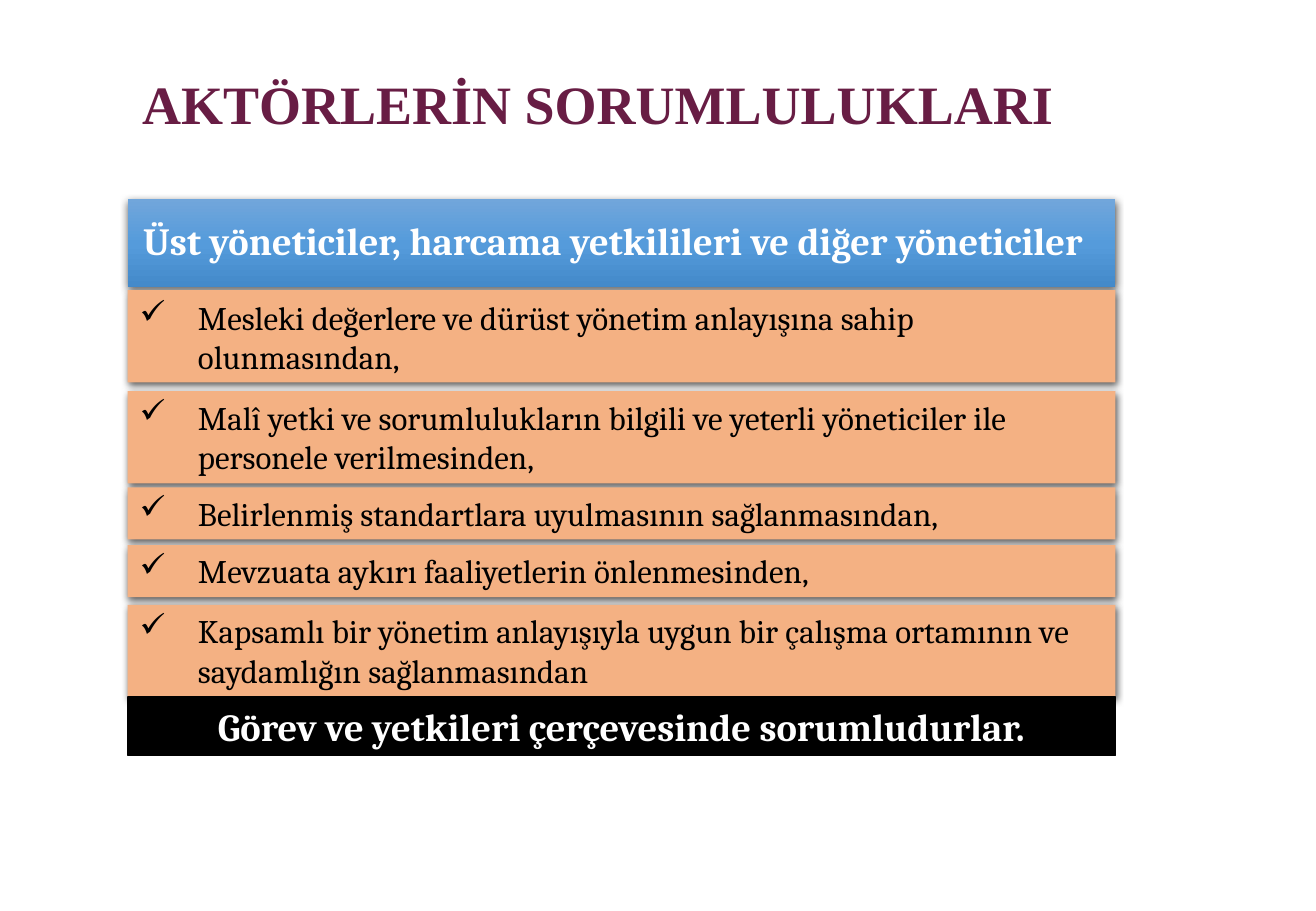
from copy import deepcopy
from dataclasses import dataclass

from lxml import etree
from pptx import Presentation
from pptx.dml.color import RGBColor
from pptx.enum.shapes import MSO_SHAPE
from pptx.enum.text import MSO_ANCHOR, MSO_AUTO_SIZE, PP_ALIGN
from pptx.oxml.ns import qn
from pptx.util import Cm, Pt

RECT = MSO_SHAPE.RECTANGLE
TOP, MIDDLE, BOTTOM = MSO_ANCHOR.TOP, MSO_ANCHOR.MIDDLE, MSO_ANCHOR.BOTTOM
LEFT, CENTER = PP_ALIGN.LEFT, PP_ALIGN.CENTER
GROW = MSO_AUTO_SIZE.SHAPE_TO_FIT_TEXT

EDGE, WIDTH = 2.67, 20.65
ONE, TWO = 1.09, 1.93
BLACK, WHITE, PEACH, PLUM = "000000", "FFFFFF", "F4B183", "681D44"
BLUES = ((0, "71A6DB"), (0.5, "559BDB"), (1, "448ACA"))


@dataclass
class Duty:
    top: float
    height: float
    text: str
    anchor: MSO_ANCHOR = TOP


DUTIES = [
    Duty(6.07, TWO, "Mesleki değerlere ve dürüst yönetim anlayışına sahip olunmasından,", BOTTOM),
    Duty(8.18, TWO, "Malî yetki ve sorumlulukların bilgili ve yeterli yöneticiler ile personele verilmesinden,"),
    Duty(10.19, ONE, "Belirlenmiş standartlara uyulmasının sağlanmasından,"),
    Duty(11.4, ONE, "Mevzuata aykırı faaliyetlerin önlenmesinden,"),
    Duty(12.65, TWO, "Kapsamlı bir yönetim anlayışıyla uygun bir çalışma ortamının ve saydamlığın sağlanmasından"),
]


def color(code: str) -> RGBColor:
    return RGBColor.from_string(code)


def write(shape, text: str, size: float, tint: str, bold: bool = False,
          font: str = "Cambria", align: PP_ALIGN = LEFT, anchor: MSO_ANCHOR = TOP):
    frame = shape.text_frame
    frame.text = text
    frame.word_wrap = True
    frame.vertical_anchor = anchor
    para = frame.paragraphs[0]
    para.alignment = align
    for run in para.runs:
        run.font.name = font
        run.font.size = Pt(size)
        run.font.bold = bold
        run.font.color.rgb = color(tint)
    return para


def add_bar(slide, top: float, height: float, fill: str):
    bar = slide.shapes.add_shape(RECT, Cm(EDGE), Cm(top), Cm(WIDTH), Cm(height))
    bar.shadow.inherit = False
    bar.fill.solid()
    bar.fill.fore_color.rgb = color(fill)
    bar.line.fill.background()
    return bar


def add_shade(bar) -> None:
    effects = bar.element.spPr.find(qn("a:effectLst"))
    shade = etree.SubElement(effects, qn("a:outerShdw"), blurRad=str(Pt(4.5)),
                             dist=str(Pt(1.5)), dir="5400000", rotWithShape="0")
    tone = etree.SubElement(shade, qn("a:srgbClr"), val=BLACK)
    etree.SubElement(tone, qn("a:alpha"), val="63000")


def add_blend(bar) -> None:
    bar.fill.gradient()
    bar.fill.gradient_angle = 270
    stops = bar.element.spPr.find(qn("a:gradFill")).find(qn("a:gsLst"))
    stops.append(deepcopy(stops[0]))
    for stop, (place, code) in zip(bar.fill.gradient_stops, BLUES):
        stop.position = place
        stop.color.rgb = color(code)


def add_tick(para) -> None:
    props = para._p.get_or_add_pPr()
    props.set("marL", str(Cm(1.22)))
    props.set("indent", str(-Cm(1.22)))
    etree.SubElement(props, qn("a:buChar"), char="✓")


def add_head(slide) -> None:
    bar = add_bar(slide, 4.17, 1.83, BLACK)
    add_blend(bar)
    add_shade(bar)
    para = write(bar, "Üst yöneticiler, harcama yetkilileri ve diğer yöneticiler",
                 22.8, WHITE, True, align=CENTER, anchor=MIDDLE)
    para.line_spacing = 0.9
    bar.text_frame.margin_left = Cm(0.2)
    bar.text_frame.margin_right = Cm(0.55)


def add_duty(slide, duty: Duty) -> None:
    bar = add_bar(slide, duty.top, duty.height, PEACH)
    add_shade(bar)
    add_tick(write(bar, duty.text, 19.5, BLACK, anchor=duty.anchor))
    bar.text_frame.auto_size = GROW


def add_foot(slide) -> None:
    bar = add_bar(slide, 14.58, 1.22, BLACK)
    bar.line.color.rgb = color(BLACK)
    bar.line.width = Pt(1)
    write(bar, "Görev ve yetkileri çerçevesinde sorumludurlar.",
          22.8, WHITE, True, align=CENTER)
    bar.text_frame.auto_size = GROW


def add_title(slide) -> None:
    box = slide.shapes.add_textbox(Cm(2.72), Cm(1.35), Cm(20.57), Cm(1.63))
    write(box, "AKTÖRLERİN SORUMLULUKLARI", 32, PLUM, True, "Times New Roman")
    box.text_frame.auto_size = GROW


def main() -> None:
    deck = Presentation()
    deck.slide_width, deck.slide_height = Cm(27.51), Cm(19.05)
    slide = deck.slides.add_slide(deck.slide_layouts[6])
    add_head(slide)
    for duty in DUTIES:
        add_duty(slide, duty)
    add_foot(slide)
    add_title(slide)
    deck.save("out.pptx")


if __name__ == "__main__":
    main()
